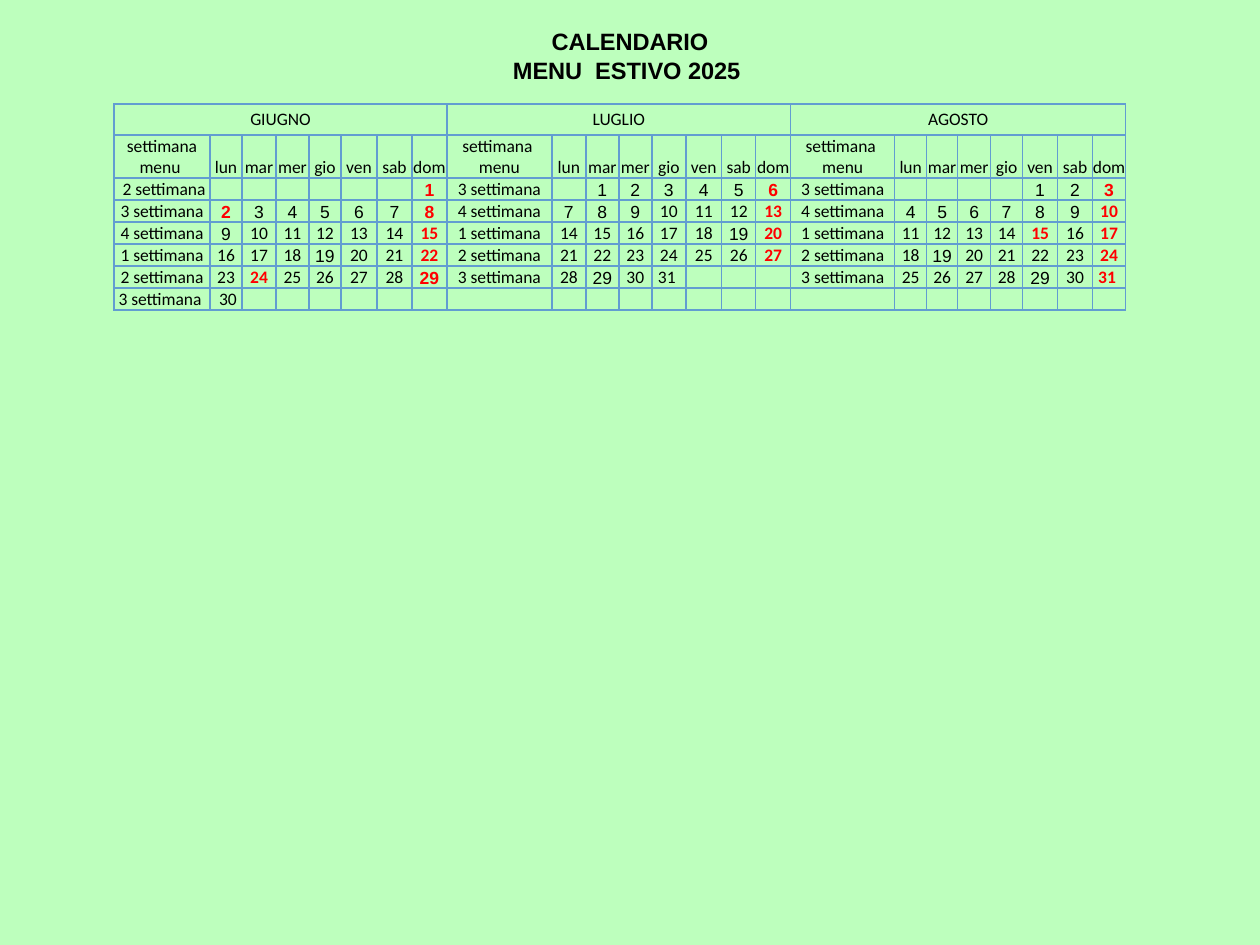
from lxml import etree
from pptx import Presentation
from pptx.dml.color import RGBColor
from pptx.enum.text import MSO_ANCHOR, MSO_AUTO_SIZE, PP_ALIGN
from pptx.oxml.ns import qn
from pptx.util import Emu, Pt

CENTER = PP_ALIGN.CENTER
TOP, BOTTOM = MSO_ANCHOR.TOP, MSO_ANCHOR.BOTTOM
GROW = MSO_AUTO_SIZE.SHAPE_TO_FIT_TEXT
PX = 914400 // 126

BACKGROUND, BORDER, WORKDAY, HOLIDAY = "BDFFBD", "629DD1", "000000", "FF0000"
TITLE = " CALENDARIO \nMENU  ESTIVO 2025 "
WEEKDAYS = ["lun", "mar", "mer", "gio", "ven", "sab", "dom"]
MONTHS = [
    dict(name="GIUGNO", heading="settimana menu ", days=30, first_weekday=6,
         first_menu=2, holidays=[2, 24], widths=[96, 32, 34, 33, 32, 36, 35, 35]),
    dict(name="LUGLIO", heading="settimana \nmenu", days=31, first_weekday=1,
         first_menu=3, holidays=[], widths=[105, 34, 33, 33, 34, 36, 34, 35]),
    dict(name="AGOSTO", heading="settimana \nmenu", days=31, first_weekday=4,
         first_menu=3, holidays=[15], widths=[104, 32, 31, 33, 32, 35, 35, 33]),
]
PADDED = {(2, 0): " 2 settimana", (7, 0): "3 settimana ", (7, 1): " 30",
          (6, 12): "31 ", (6, 23): "31 "}
ROW_HEIGHTS = [31, 43] + [22] * 6
MONTH_COLUMNS = 1 + len(WEEKDAYS)
MENU_CYCLE = 4


def px(length):
    return Emu(length * PX)


def color(value):
    return RGBColor.from_string(value)


def style_text(frame, size, font="Calibri", ink=WORKDAY, bold=False):
    for paragraph in frame.paragraphs:
        paragraph.alignment = CENTER
        for run in paragraph.runs:
            for name, value in dict(size=Pt(size), name=font, bold=bold).items():
                setattr(run.font, name, value)
            run.font.color.rgb = color(ink)
        if not paragraph.runs:
            paragraph._p.get_or_add_endParaRPr().set("sz", str(size * 100))


def add_borders(cell):
    properties = cell._tc.get_or_add_tcPr()
    for position, side in enumerate(("lnL", "lnR", "lnT", "lnB")):
        line = etree.Element(qn("a:" + side), w=str(Pt(1)))
        fill = etree.SubElement(line, qn("a:solidFill"))
        etree.SubElement(fill, qn("a:srgbClr"), val=BORDER)
        properties.insert(position, line)


def month_entries(month):
    yield 0, 0, month["name"], {}
    yield 1, 0, month["heading"], {}
    for column, weekday in enumerate(WEEKDAYS, 1):
        yield 1, column, weekday, {}
    weeks = -(-(month["first_weekday"] + month["days"]) // 7)
    for week in range(weeks):
        menu = (month["first_menu"] - 1 + week) % MENU_CYCLE + 1
        yield 2 + week, 0, f"{menu} settimana", {}
    for day in range(1, month["days"] + 1):
        week, weekday = divmod(month["first_weekday"] + day - 1, 7)
        festive = weekday == 6 or day in month["holidays"]
        arial = day < 10 or day % 10 == 9
        yield 2 + week, 1 + weekday, str(day), dict(
            font="Arial" if arial else "Calibri",
            ink=HOLIDAY if festive else WORKDAY, bold=festive)


def add_title(slide):
    title = slide.shapes.title
    place = dict(left=295, top=21, width=670, height=71)
    for name, value in place.items():
        setattr(title, name, px(value))
    frame = title.text_frame
    frame.text = TITLE
    for name, value in dict(vertical_anchor=TOP, word_wrap=True, auto_size=GROW).items():
        setattr(frame, name, value)
    style_text(frame, 13.5, "Arial", bold=True)


def add_calendar(slide):
    widths = [width for month in MONTHS for width in month["widths"]]
    calendar = slide.shapes.add_table(
        len(ROW_HEIGHTS), len(widths), px(114), px(104),
        px(sum(widths)), px(sum(ROW_HEIGHTS))).table
    calendar.first_row = calendar.horz_banding = False
    for column, width in zip(calendar.columns, widths):
        column.width = px(width)
    for row, height in zip(calendar.rows, ROW_HEIGHTS):
        row.height = px(height)

    entries = {}
    for index, month in enumerate(MONTHS):
        start = index * MONTH_COLUMNS
        for row, column, text, look in month_entries(month):
            place = row, start + column
            entries[place] = PADDED.get(place, text), look
        calendar.cell(0, start).merge(calendar.cell(0, start + MONTH_COLUMNS - 1))

    for row in range(len(ROW_HEIGHTS)):
        side, end = (px(9), px(5)) if row == 0 else (0, 0)
        layout = dict(margin_left=side, margin_right=side, margin_top=end,
                      margin_bottom=end, vertical_anchor=BOTTOM)
        for column in range(len(widths)):
            cell = calendar.cell(row, column)
            text, look = entries.get((row, column), ("", {}))
            cell.text = text
            style_text(cell.text_frame, 10, **look)
            for name, value in layout.items():
                setattr(cell, name, value)
            cell.fill.solid()
            cell.fill.fore_color.rgb = color(BACKGROUND)
            add_borders(cell)


def main():
    deck = Presentation()
    deck.slide_width, deck.slide_height = px(1260), px(945)
    slide = deck.slides.add_slide(deck.slide_layouts[5])
    slide.background.fill.solid()
    slide.background.fill.fore_color.rgb = color(BACKGROUND)
    add_title(slide)
    add_calendar(slide)
    deck.save("out.pptx")


if __name__ == "__main__":
    main()
